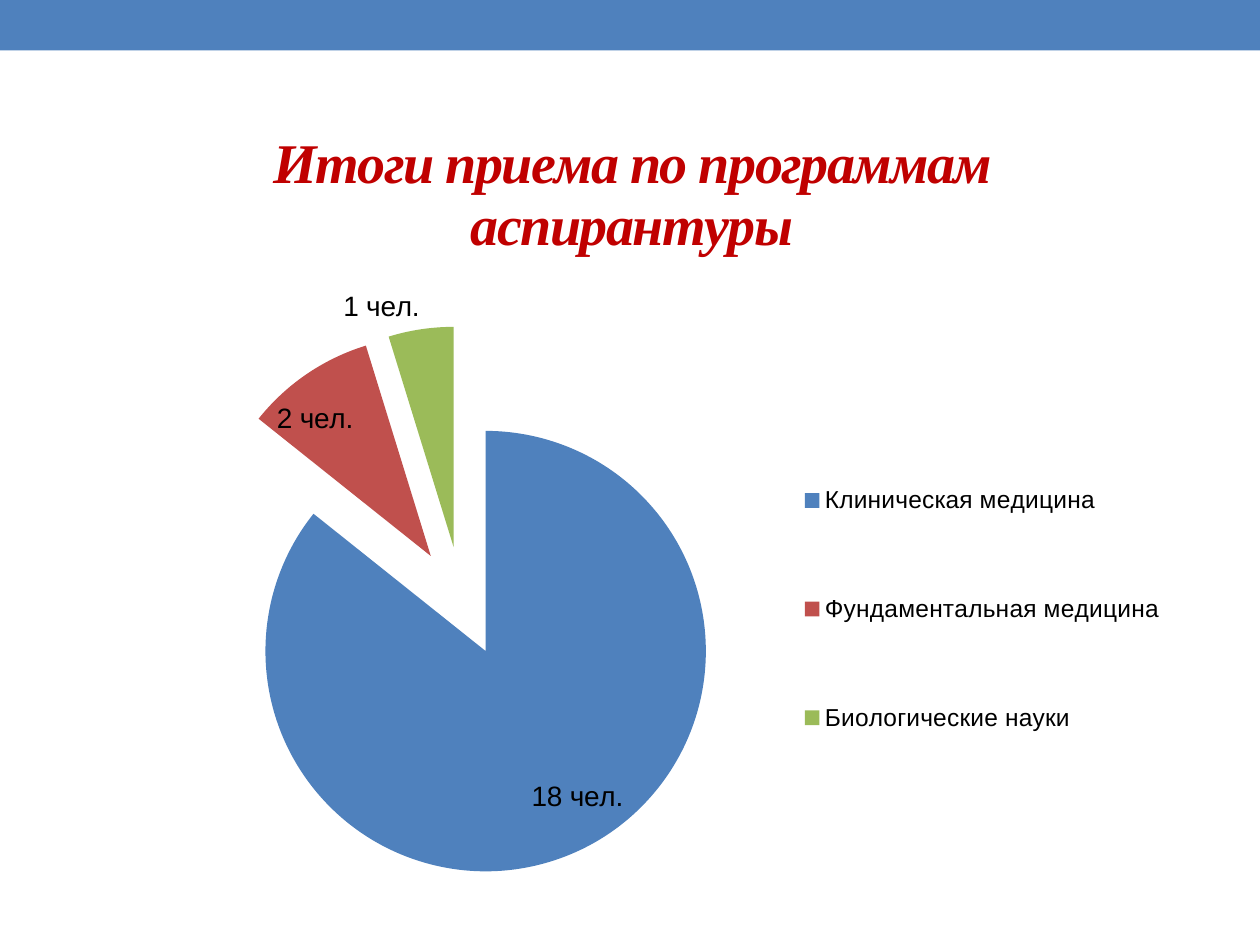
from dataclasses import dataclass

from lxml import etree
from pptx import Presentation
from pptx.chart.data import CategoryChartData
from pptx.dml.color import RGBColor
from pptx.enum.chart import XL_CHART_TYPE, XL_LABEL_POSITION, XL_LEGEND_POSITION
from pptx.enum.shapes import MSO_SHAPE
from pptx.enum.text import PP_ALIGN
from pptx.oxml.ns import qn
from pptx.util import Inches, Pt

PIE = XL_CHART_TYPE.PIE
INSIDE = XL_LABEL_POSITION.INSIDE_END
OUTSIDE = XL_LABEL_POSITION.OUTSIDE_END
RIGHT = XL_LEGEND_POSITION.RIGHT
RECTANGLE = MSO_SHAPE.RECTANGLE
CENTER = PP_ALIGN.CENTER


@dataclass(frozen=True)
class Theme:
    blue: str = "4F81BD"
    red: str = "C0504D"
    green: str = "9BBB59"
    title: str = "C00000"
    text: str = "000000"
    title_font: str = "Times New Roman"
    body_font: str = "Arial"
    title_size: int = 32
    label_size: int = 16
    legend_size: int = 14
    chart_size: int = 10


@dataclass(frozen=True)
class Box:
    left: float
    top: float
    width: float = 0
    height: float = 0


@dataclass(frozen=True)
class Programme:
    name: str
    people: int
    color: str
    position: XL_LABEL_POSITION
    label_shift: tuple[float, float] | None = None


THEME = Theme()
CHART_BOX = Box(0.59, 0.92, 8.99, 6.18)
TITLE_BOX = Box(2.09, 0.93)
PIE_BOX = Box(1.48, 2.59, 4.37, 4.37)
LEGEND_BOX = Box(6.22, 3.22, 3.15, 3.23)
TITLE = "Итоги приема по программам аспирантуры"
PROGRAMMES = (
    Programme("Клиническая медицина", 18, THEME.blue, INSIDE, (0.04, -0.04)),
    Programme("Фундаментальная медицина", 2, THEME.red, INSIDE, (-0.03, 0.03)),
    Programme("Биологические науки", 1, THEME.green, OUTSIDE),
)
EXPLOSION = 25


def format_font(font, *, name: str, size: int, color: str,
                bold: bool = False, italic: bool = False) -> None:
    font.name = name
    font.size = Pt(size)
    font.color.rgb = RGBColor.from_string(color)
    font.bold = bold
    font.italic = italic


def write_text(para, text: str, *, spacing: int = 0, **style) -> None:
    para.alignment = CENTER
    span = para.add_run()
    span.text = text
    format_font(span.font, **style)
    if spacing:
        span.font._element.set("spc", str(spacing))


def set_layout(parent, after: str | None, **values: str | float) -> None:
    for old in parent.findall(qn("c:layout")):
        parent.remove(old)
    layout = etree.Element(qn("c:layout"))
    manual = etree.SubElement(layout, qn("c:manualLayout"))
    for tag, value in values.items():
        etree.SubElement(manual, qn(f"c:{tag}")).set("val", str(value))
    anchor = parent.find(qn(after)) if after else None
    parent.insert(0 if anchor is None else parent.index(anchor) + 1, layout)


def place(parent, after: str | None, box: Box, **values: str | float) -> None:
    values.update(xMode="edge", yMode="edge",
                  x=(box.left - CHART_BOX.left) / CHART_BOX.width,
                  y=(box.top - CHART_BOX.top) / CHART_BOX.height)
    if box.width:
        values.update(w=box.width / CHART_BOX.width,
                      h=box.height / CHART_BOX.height)
    set_layout(parent, after, **values)


def add_bar(page) -> None:
    bar = page.shapes.add_shape(RECTANGLE, 0, 0, Inches(10), Inches(0.4))
    bar.shadow.inherit = False
    bar.fill.solid()
    bar.fill.fore_color.rgb = RGBColor.from_string(THEME.blue)
    bar.line.fill.background()


def add_title(chart) -> None:
    chart.has_title = True
    para = chart.chart_title.text_frame.paragraphs[0]
    write_text(para, TITLE, name=THEME.title_font, size=THEME.title_size,
               color=THEME.title, bold=True, italic=True, spacing=-100)
    chart.chart_title.include_in_layout = False
    place(chart.chart_title._element, "c:tx", TITLE_BOX)


def add_legend(chart) -> None:
    chart.has_legend = True
    chart.legend.position = RIGHT
    chart.legend.include_in_layout = False
    format_font(chart.legend.font, name=THEME.body_font,
                size=THEME.legend_size, color=THEME.text)
    place(chart.legend._element, "c:legendPos", LEGEND_BOX)


def style_slice(point, programme: Programme) -> None:
    point.format.fill.solid()
    point.format.fill.fore_color.rgb = RGBColor.from_string(programme.color)
    label = point.data_label
    write_text(label.text_frame.paragraphs[0], f"{programme.people} чел.",
               name=THEME.body_font, size=THEME.label_size, color=THEME.text)
    label.position = programme.position
    if programme.label_shift:
        across, down = programme.label_shift
        element = label.text_frame._txBody.getparent().getparent()
        set_layout(element, "c:idx", x=across, y=down)


def add_pie(page) -> None:
    data = CategoryChartData()
    data.categories = [programme.name for programme in PROGRAMMES]
    data.add_series("Человек", [programme.people for programme in PROGRAMMES])
    chart = page.shapes.add_chart(
        PIE, Inches(CHART_BOX.left), Inches(CHART_BOX.top),
        Inches(CHART_BOX.width), Inches(CHART_BOX.height), data).chart
    format_font(chart.font, name=THEME.body_font,
                size=THEME.chart_size, color=THEME.text)
    add_title(chart)
    add_legend(chart)
    plot = chart.plots[0]
    plot.vary_by_categories = True
    series = plot.series[0]
    for index, programme in enumerate(PROGRAMMES):
        style_slice(series.points[index], programme)
    labels = series.data_labels
    labels.show_value = True
    labels.show_series_name = True
    format_font(labels.font, name=THEME.body_font, size=THEME.label_size,
                color=THEME.text, bold=True)
    explosion = etree.Element(qn("c:explosion"))
    explosion.set("val", str(EXPLOSION))
    series._element.find(qn("c:dPt")).addprevious(explosion)
    place(plot._element.getparent(), None, PIE_BOX, layoutTarget="inner")


def main() -> None:
    deck = Presentation()
    deck.slide_width = Inches(10)
    deck.slide_height = Inches(7.5)
    page = deck.slides.add_slide(deck.slide_layouts[6])
    add_bar(page)
    add_pie(page)
    deck.save("out.pptx")


if __name__ == "__main__":
    main()
